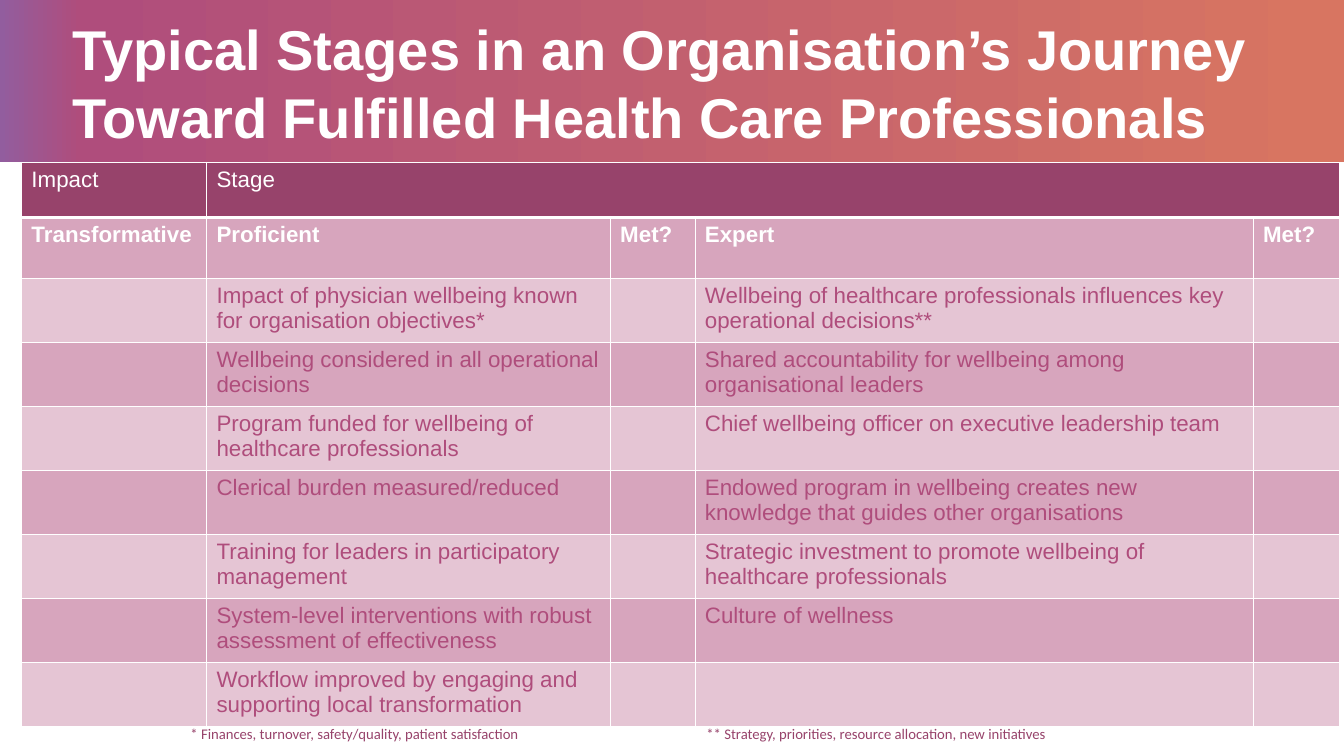
from copy import deepcopy

from lxml import etree
from pptx import Presentation
from pptx.dml.color import RGBColor
from pptx.enum.shapes import MSO_SHAPE
from pptx.oxml.ns import qn
from pptx.util import Emu, Pt

RECTANGLE = MSO_SHAPE.RECTANGLE
EMU_PER_PX = 9525
PAGE_WIDTH, PAGE_HEIGHT = 1365, 768
BANNER_HEIGHT = 165
WHITE, PLUM, ROSE = "FFFFFF", "97436B", "AF4D7C"
BANDS = ("D7A5BD", "E5C5D4")
BANNER_STOPS = ((0, "925D9E"), (0.06, ROSE), (0.99, "D87561"))

COLUMN_WIDTHS = (188, 410, 86, 567, 88)
ROW_HEIGHTS = (56, 62) + (65,) * 7
HEADINGS = ("Transformative", "Proficient", "Met?", "Expert", "Met?")
STAGES = (
    ("Impact of physician wellbeing known for organisation objectives*",
     "Wellbeing of healthcare professionals influences key operational decisions**"),
    ("Wellbeing considered in all operational decisions",
     "Shared accountability for wellbeing among organisational leaders"),
    ("Program funded for wellbeing of healthcare professionals",
     "Chief wellbeing officer on executive leadership team"),
    ("Clerical burden measured/reduced",
     "Endowed program in wellbeing creates new knowledge that guides other organisations"),
    ("Training for leaders in participatory management",
     "Strategic investment to promote wellbeing of healthcare professionals"),
    ("System-level interventions with robust assessment of effectiveness",
     "Culture of wellness"),
    ("Workflow improved by engaging and supporting local transformation", ""),
)


def px(length):
    return Emu(length * EMU_PER_PX)


def color(value):
    return RGBColor.from_string(value)


def style_font(font, name, size, ink, bold=False):
    font.name = name
    font.size = Pt(size)
    font.bold = bold
    font.color.rgb = color(ink)


def add_banner(page):
    banner = page.shapes.add_shape(RECTANGLE, 0, 0, px(PAGE_WIDTH), px(BANNER_HEIGHT))
    banner.shadow.inherit = False
    banner.line.fill.background()
    banner.fill.gradient()
    banner.fill.gradient_angle = 0
    stop_list = banner.fill._xPr.find(qn("a:gradFill")).find(qn("a:gsLst"))
    stop_list.append(deepcopy(stop_list[-1]))
    for stop, (position, ink) in zip(banner.fill.gradient_stops, BANNER_STOPS):
        stop.position = position
        stop.color.rgb = color(ink)


def add_text(page, left, top, width, height, text, font_name, size, ink, bold=False):
    box = page.shapes.add_textbox(px(left), px(top), px(width), px(height))
    box.text_frame.word_wrap = True
    para = box.text_frame.paragraphs[0]
    para.text = text
    style_font(para.font, font_name, size, ink, bold)
    return para


def set_borders(cell, bottom_width):
    properties = cell._tc.get_or_add_tcPr()
    for side, width in (("L", 1), ("R", 1), ("T", 1), ("B", bottom_width)):
        line = etree.SubElement(properties, qn(f"a:ln{side}"), w=str(Pt(width)))
        fill = etree.SubElement(line, qn("a:solidFill"))
        etree.SubElement(fill, qn("a:srgbClr"), val=WHITE)


def fill_cell(cell, text, background, ink, bold=False, bottom_width=1):
    set_borders(cell, bottom_width)
    cell.fill.solid()
    cell.fill.fore_color.rgb = color(background)
    cell.margin_left = cell.margin_right = px(10)
    cell.margin_top = cell.margin_bottom = px(5)
    para = cell.text_frame.paragraphs[0]
    para.text = text
    style_font(para.font, "Arial", 17, ink, bold)


def add_stage_table(page):
    rows = [("Impact", "Stage", "", "", ""), HEADINGS]
    rows += [("", proficient, "", expert, "") for proficient, expert in STAGES]
    frame = page.shapes.add_table(
        len(rows), len(COLUMN_WIDTHS), px(22), px(BANNER_HEIGHT),
        px(sum(COLUMN_WIDTHS)), px(sum(ROW_HEIGHTS)))
    table = frame.table
    for column, width in zip(table.columns, COLUMN_WIDTHS):
        column.width = px(width)
    for row, height in zip(table.rows, ROW_HEIGHTS):
        row.height = px(height)
    for row_index, texts in enumerate(rows):
        for column_index, text in enumerate(texts):
            cell = table.cell(row_index, column_index)
            if row_index == 0:
                fill_cell(cell, text, PLUM, WHITE, bottom_width=3)
            else:
                is_heading = row_index == 1
                fill_cell(cell, text, BANDS[(row_index - 1) % 2],
                          WHITE if is_heading else ROSE, bold=is_heading)
    table.cell(0, 1).merge(table.cell(0, len(COLUMN_WIDTHS) - 1))


def main():
    deck = Presentation()
    deck.slide_width, deck.slide_height = px(PAGE_WIDTH), px(PAGE_HEIGHT)
    page = deck.slides.add_slide(deck.slide_layouts[6])
    add_banner(page)
    title = add_text(
        page, 64, 9, 1254, 148,
        "Typical Stages in an Organisation’s Journey Toward Fulfilled Health Care Professionals",
        "Arial", 42.7, WHITE, bold=True)
    title.line_spacing = Pt(51.8)
    add_stage_table(page)
    add_text(page, 184, 732, 361, 59,
             "* Finances, turnover, safety/quality, patient satisfaction",
             "Calibri", 11.2, PLUM)
    add_text(page, 708, 732, 372, 59,
             "** Strategy, priorities, resource allocation, new initiatives",
             "Calibri", 11.2, PLUM)
    deck.save("out.pptx")


if __name__ == "__main__":
    main()
